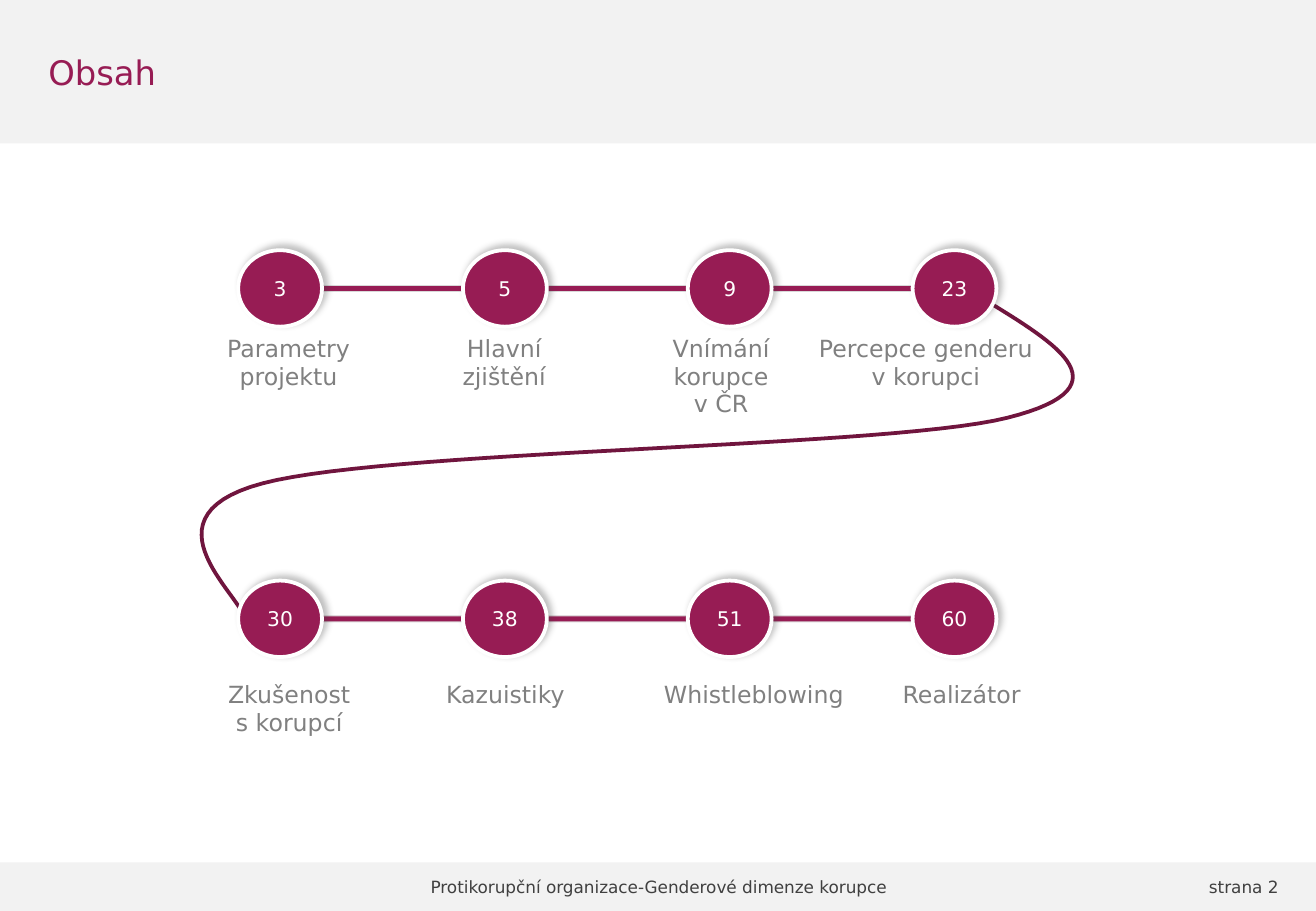
"""Build the contents slide with two rows of numbered stops."""
from dataclasses import dataclass

from lxml import etree
from pptx import Presentation
from pptx import util as u
from pptx.dml.color import RGBColor
from pptx.enum import shapes, text
from pptx.oxml import ns

COLORS = {
    "band": "F2F2F2", "footer": "404040", "plum": "971C54", "curve": "70153E",
    "edge": "D9D9D9", "white": "FFFFFF", "label": "808080", "shadow": "404040",
}
FONT = "DejaVu Sans"
NO_GRID_STYLE = "{2D5ABB26-0587-4C30-8999-92F81FD0307C}"
STOP_LEFT, STOP_STEP, STOP_WIDTH, STOP_HEIGHT = 1.96, 1.85, 0.69, 0.63
CURVE_START = (8.14, 2.49)
CURVE_SEGMENTS = (
    ((8.71, 2.84), (9.28, 3.19), (8.29, 3.44)),
    ((7.29, 3.69), (3.2, 3.7), (2.16, 3.98)),
    ((1.11, 4.26), (2.04, 4.94), (2.02, 5.12)),
)
CURVE_STEPS = 30


@dataclass(frozen=True)
class Caption:
    words: str
    left: float
    top: float
    width: float
    height: float
    size: int
    color: str
    align: text.PP_ALIGN


@dataclass(frozen=True)
class Route:
    top: float
    pages: tuple[str, ...]
    table_top: float
    table_height: float
    widths: tuple[float, ...]
    labels: tuple[str, ...]


TITLE = Caption("Obsah", 0.3, 0, 10.24, 1.18, 20, "plum", text.PP_ALIGN.LEFT)
FOOTERS = (
    Caption("Protikorupční organizace-Genderové dimenze korupce",
            2.86, 7.1, 5.12, 0.4, 10, "footer", text.PP_ALIGN.CENTER),
    Caption("strana 2", 7.98, 7.1, 2.64, 0.4, 10, "footer", text.PP_ALIGN.RIGHT),
)
UPPER = Route(2.06, ("3", "5", "9", "23"), 2.71, 0.88, (1.33, 2.22, 1.35, 2.02, 1.37),
              ("Parametry\vprojektu", "Hlavní\nzjištění", "Vnímání\vkorupce\vv ČR",
               "Percepce genderu\vv korupci", ""))
LOWER = Route(4.78, ("30", "38", "51", "60"), 5.56, 0.81, (1.34, 2.22, 1.87, 1.55),
              ("Zkušenost\vs korupcí", "Kazuistiky", "Whistleblowing", "Realizátor"))


def rgb(name: str) -> RGBColor:
    return RGBColor.from_string(COLORS[name])


def write(frame, words: str, size: int, color: str, align: text.PP_ALIGN) -> None:
    frame.text = words
    for para in frame.paragraphs:
        para.alignment = align
        for span in para.runs:
            span.font.name = FONT
            span.font.size = u.Pt(size)
            span.font.color.rgb = rgb(color)


def add_caption(page, caption: Caption) -> None:
    box = page.shapes.add_textbox(u.Inches(caption.left), u.Inches(caption.top),
                                  u.Inches(caption.width), u.Inches(caption.height))
    frame = box.text_frame
    frame.word_wrap = True
    frame.vertical_anchor = text.MSO_ANCHOR.MIDDLE
    write(frame, caption.words, caption.size, caption.color, caption.align)


def add_solid(parent, kind, left: float, top: float, width: float, height: float,
              fill: str, line: str = "", weight: float = 0):
    shape = parent.shapes.add_shape(kind, u.Inches(left), u.Inches(top),
                                    u.Inches(width), u.Inches(height))
    shape.shadow.inherit = False
    shape.fill.solid()
    shape.fill.fore_color.rgb = rgb(fill)
    if line:
        shape.line.color.rgb = rgb(line)
        shape.line.width = u.Pt(weight)
    else:
        shape.line.fill.background()
    return shape


def add_shadow(shape) -> None:
    effects = shape._element.spPr.find(ns.qn("a:effectLst"))
    outer = etree.SubElement(effects, ns.qn("a:outerShdw"), blurRad=str(u.Pt(4)),
                             dist=str(u.Pt(3)), dir=str(315 * 60000), rotWithShape="0")
    color = etree.SubElement(outer, ns.qn("a:srgbClr"), val=COLORS["shadow"])
    etree.SubElement(color, ns.qn("a:alpha"), val="32000")


def add_stops(page, route: Route) -> None:
    group = page.shapes.add_group_shape()
    add_solid(group, shapes.MSO_SHAPE.ROUNDED_RECTANGLE, 2.3, route.top + 0.29, 5.88, 0.05,
              "plum", "edge", 0.5)
    for index, number in enumerate(route.pages):
        stop = add_solid(group, shapes.MSO_SHAPE.OVAL, STOP_LEFT + index * STOP_STEP,
                         route.top, STOP_WIDTH, STOP_HEIGHT, "plum", "white", 2.25)
        add_shadow(stop)
        frame = stop.text_frame
        frame.vertical_anchor = text.MSO_ANCHOR.MIDDLE
        write(frame, number, 12, "white", text.PP_ALIGN.CENTER)


def add_labels(page, route: Route) -> None:
    table = page.shapes.add_table(1, len(route.widths), u.Inches(1.71),
                                  u.Inches(route.table_top), u.Inches(sum(route.widths)),
                                  u.Inches(route.table_height)).table
    table.first_row = table.horz_banding = False
    table._tbl.tblPr.find(ns.qn("a:tableStyleId")).text = NO_GRID_STYLE
    for index, (width, label) in enumerate(zip(route.widths, route.labels)):
        table.columns[index].width = u.Inches(width)
        cell = table.cell(0, index)
        cell.fill.background()
        write(cell.text_frame, label, 14, "label", text.PP_ALIGN.CENTER)


def bezier(start: float, first: float, second: float, end: float, t: float) -> float:
    s = 1 - t
    return s**3 * start + 3 * s * s * t * first + 3 * s * t * t * second + t**3 * end


def add_curve(page) -> None:
    points, start = [], CURVE_START
    for segment in CURVE_SEGMENTS:
        for step in range(1, CURVE_STEPS + 1):
            points.append(tuple(u.Inches(bezier(*axis, step / CURVE_STEPS))
                                for axis in zip(start, *segment)))
        start = segment[-1]
    builder = page.shapes.build_freeform(*(u.Inches(value) for value in CURVE_START))
    builder.add_line_segments(points, close=False)
    curve = builder.convert_to_shape()
    curve.shadow.inherit = False
    curve.fill.background()
    curve.line.color.rgb = rgb("curve")
    curve.line.width = u.Pt(2.25)


def main() -> None:
    deck = Presentation()
    deck.slide_width, deck.slide_height = u.Inches(10.83), u.Inches(7.5)
    page = deck.slides.add_slide(deck.slide_layouts[6])
    for top, height in ((7.1, 0.4), (0, 1.18)):
        add_solid(page, shapes.MSO_SHAPE.RECTANGLE, 0, top, 10.83, height, "band")
    for caption in (*FOOTERS, TITLE):
        add_caption(page, caption)
    add_curve(page)
    for route in (UPPER, LOWER):
        add_stops(page, route)
        add_labels(page, route)
    deck.save("out.pptx")


if __name__ == "__main__":
    main()
